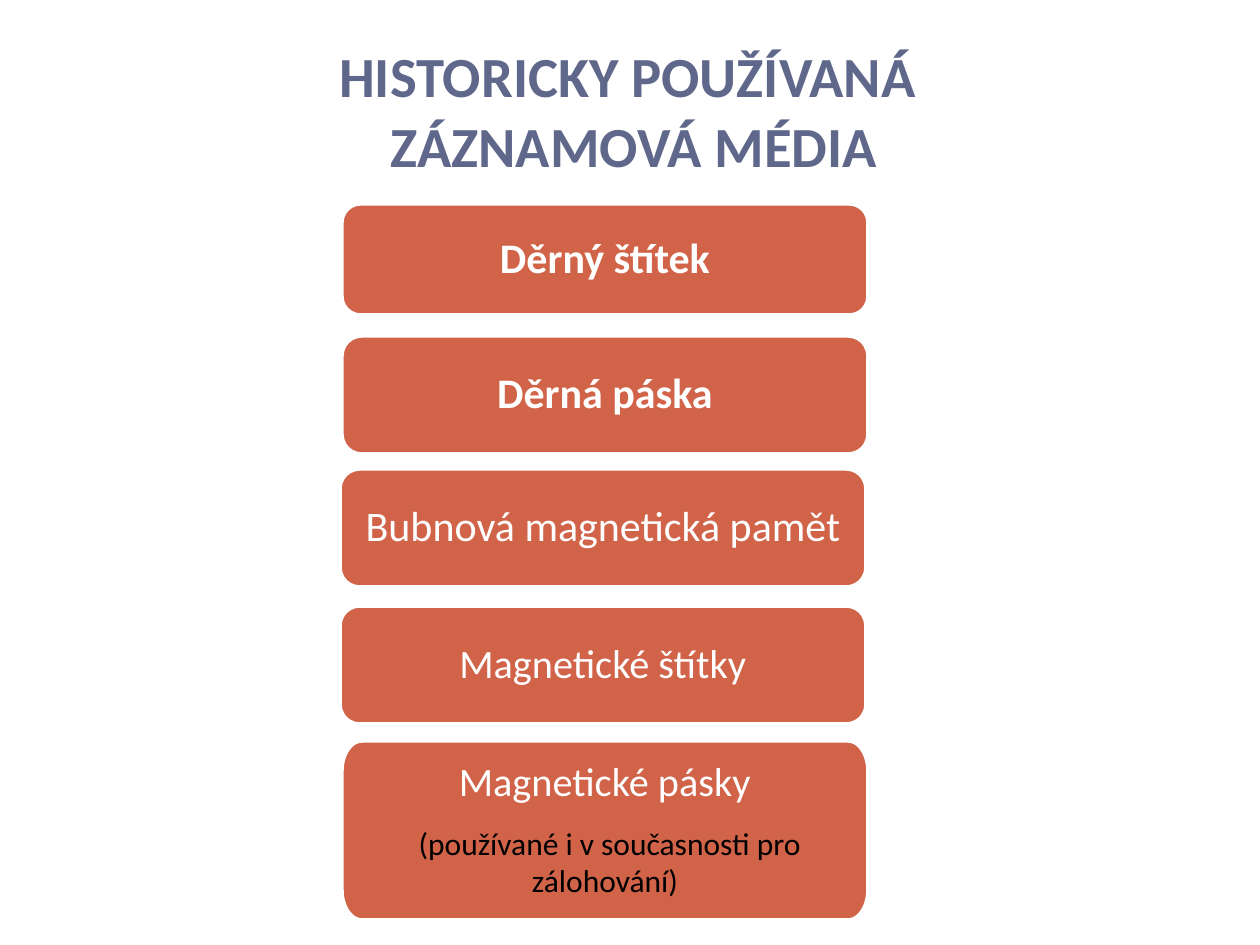
from dataclasses import dataclass
from math import cos, pi, sin

from pptx import Presentation
from pptx.dml.color import RGBColor
from pptx.enum.shapes import MSO_SHAPE
from pptx.enum.text import MSO_ANCHOR, MSO_AUTO_SIZE, PP_ALIGN
from pptx.util import Inches, Pt

# Content: each box is left, top, height, then its paragraphs as lists of
# (text, size name, colour name, bold)
TITLE_LINES = ["HISTORICKY POUŽÍVANÁ ", "ZÁZNAMOVÁ MÉDIA"]
MEDIA = [
    (342, 204, 111, [[("Děrný štítek", "large", "light", True)]]),
    (342, 336, 118, [[("Děrná páska", "large", "light", True)]]),
    (340, 469, 118, [[("Bubnová magnetická pamět", "large", "light", False)]]),
    (340, 606, 118, [[("Magnetické štítky", "medium", "light", False)]]),
]
TAPES = (342, 741, 179, [
    [("Magnetické pásky", "medium", "light", False)],
    [(" ", "large", "light", False),
     ("(používané i v současnosti pro zálohování)", "small", "dark", False)],
])
BOX_WIDTH = 526
CORNER_WIDTH = 20
CORNER_SHARE = 1 / 6
CORNER_STEPS = 12


@dataclass(frozen=True)
class Theme:
    font = "Calibri"
    colours = {"title": "5F688B", "box": "D16349", "light": "FFFFFF", "dark": "000000"}
    sizes = {"title": 32.4, "large": 24, "medium": 23, "small": 18}


THEME = Theme()


def px(value):
    return Inches(value / 126)


def colour(name):
    return RGBColor.from_string(THEME.colours[name])


def add_run(paragraph, text, size, colour_name, bold):
    run = paragraph.add_run()
    run.text = text
    run.font.name = THEME.font
    run.font.size = Pt(THEME.sizes[size])
    run.font.color.rgb = colour(colour_name)
    run.font.bold = bold


def add_title(slide):
    title = slide.shapes.title
    title.left, title.top, title.width, title.height = map(px, (54, 100, 1160, 85))
    frame = title.text_frame
    frame.auto_size = MSO_AUTO_SIZE.NONE
    frame.vertical_anchor = MSO_ANCHOR.BOTTOM
    paragraph = frame.paragraphs[0]
    paragraph.alignment = PP_ALIGN.CENTER
    paragraph.line_spacing = Pt(40)
    for index, line in enumerate(TITLE_LINES):
        if index:
            paragraph.add_line_break()
        add_run(paragraph, line, "title", "title", True)


def format_box(shape, paragraphs, side_inset, end_inset):
    shape.shadow.inherit = False
    shape.fill.solid()
    shape.fill.fore_color.rgb = colour("box")
    shape.line.color.rgb = colour("light")
    shape.line.width = Pt(2)
    frame = shape.text_frame
    frame.word_wrap = True
    frame.vertical_anchor = MSO_ANCHOR.MIDDLE
    frame.margin_left = frame.margin_right = px(side_inset)
    frame.margin_top = frame.margin_bottom = px(end_inset)
    for index, runs in enumerate(paragraphs):
        paragraph = frame.add_paragraph() if index else frame.paragraphs[0]
        paragraph.alignment = PP_ALIGN.CENTER
        paragraph.line_spacing = 0.9
        paragraph.space_after = Pt(8)
        for run in runs:
            add_run(paragraph, *run)


def build_stretched_box(slide, left, top, height):
    """Box whose corners are quarter ellipses, taller than wide."""
    corner_height = height * CORNER_SHARE
    right, bottom = left + BOX_WIDTH - CORNER_WIDTH, top + height - corner_height
    centres = [(right, bottom), (left + CORNER_WIDTH, bottom),
               (left + CORNER_WIDTH, top + corner_height), (right, top + corner_height)]
    points = []
    for quarter, (x, y) in enumerate(centres):
        for step in range(CORNER_STEPS + 1):
            angle = (quarter + step / CORNER_STEPS) * pi / 2
            points.append((px(x + CORNER_WIDTH * cos(angle)),
                           px(y + corner_height * sin(angle))))
    builder = slide.shapes.build_freeform(*points[0])
    builder.add_line_segments(points[1:], close=True)
    return builder.convert_to_shape()


def main():
    presentation = Presentation()
    presentation.slide_width, presentation.slide_height = Inches(10), Inches(7.5)
    slide = presentation.slides.add_slide(presentation.slide_layouts[5])
    add_title(slide)

    # Media with evenly rounded boxes
    for left, top, height, paragraphs in MEDIA:
        box = slide.shapes.add_shape(MSO_SHAPE.ROUNDED_RECTANGLE,
                                     *map(px, (left, top, BOX_WIDTH, height)))
        box.adjustments[0] = CORNER_SHARE
        format_box(box, paragraphs, 12, 7)

    # Tapes, with the note on present use
    left, top, height, paragraphs = TAPES
    format_box(build_stretched_box(slide, left, top, height), paragraphs, 18, 13)

    presentation.save("out.pptx")


if __name__ == "__main__":
    main()
